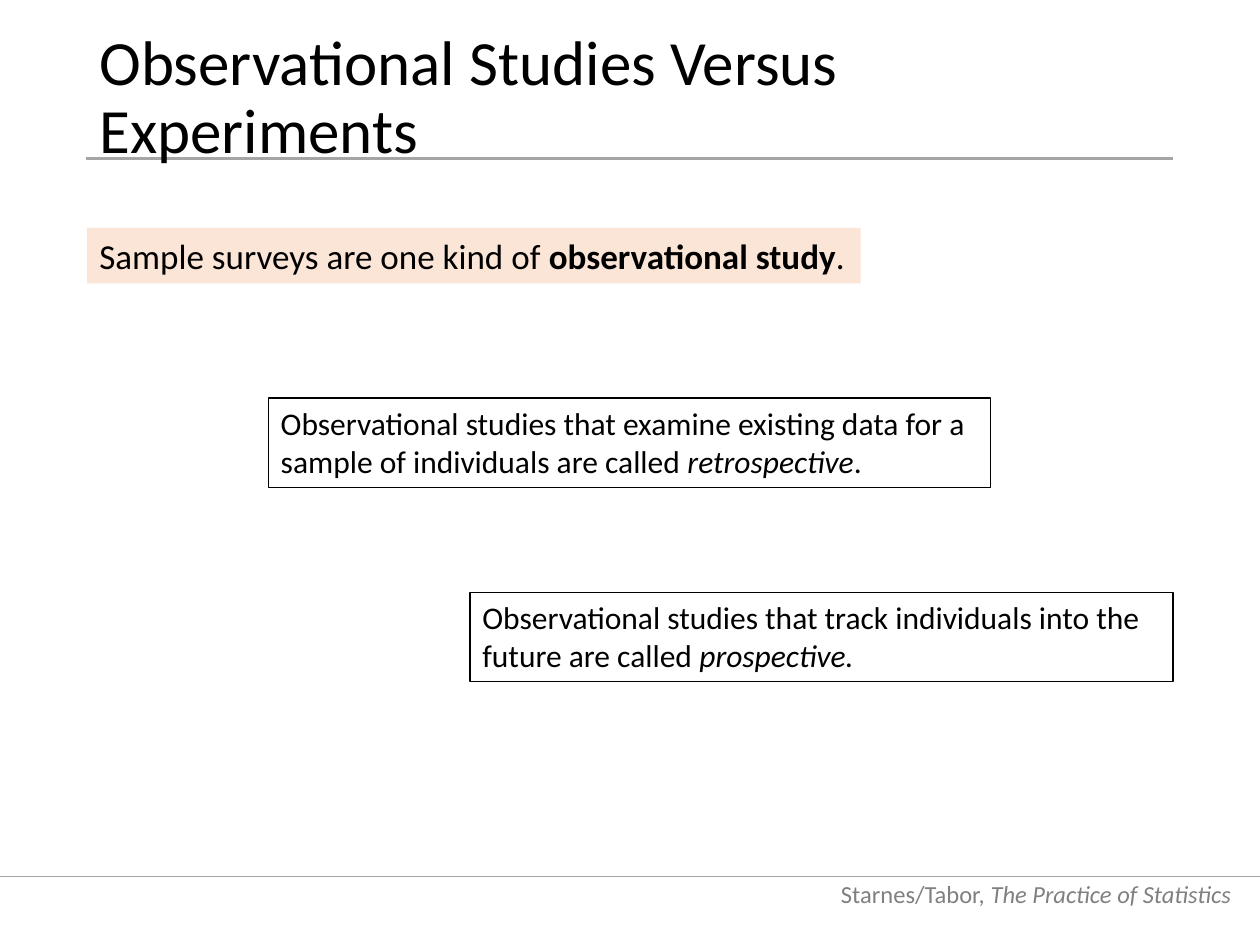
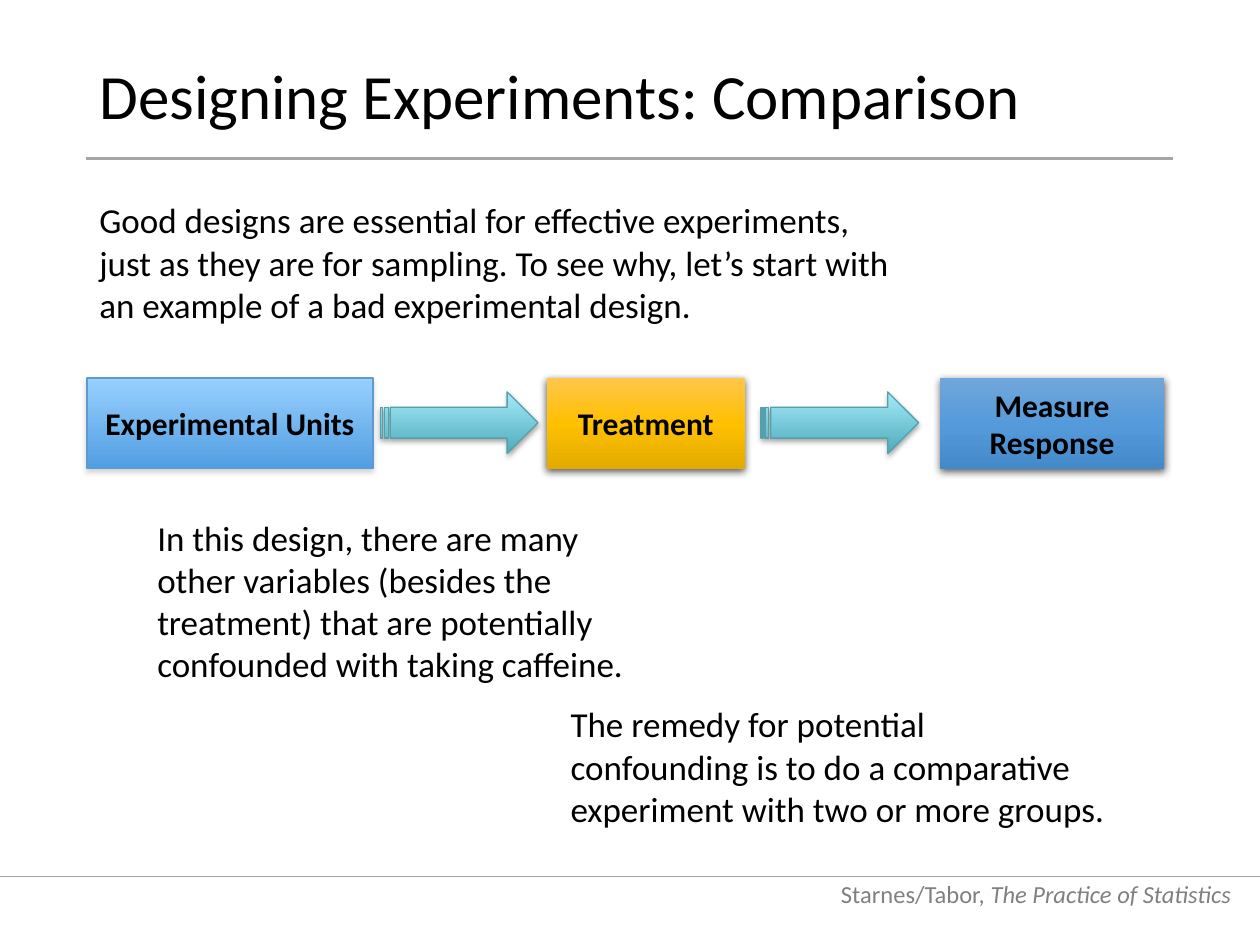
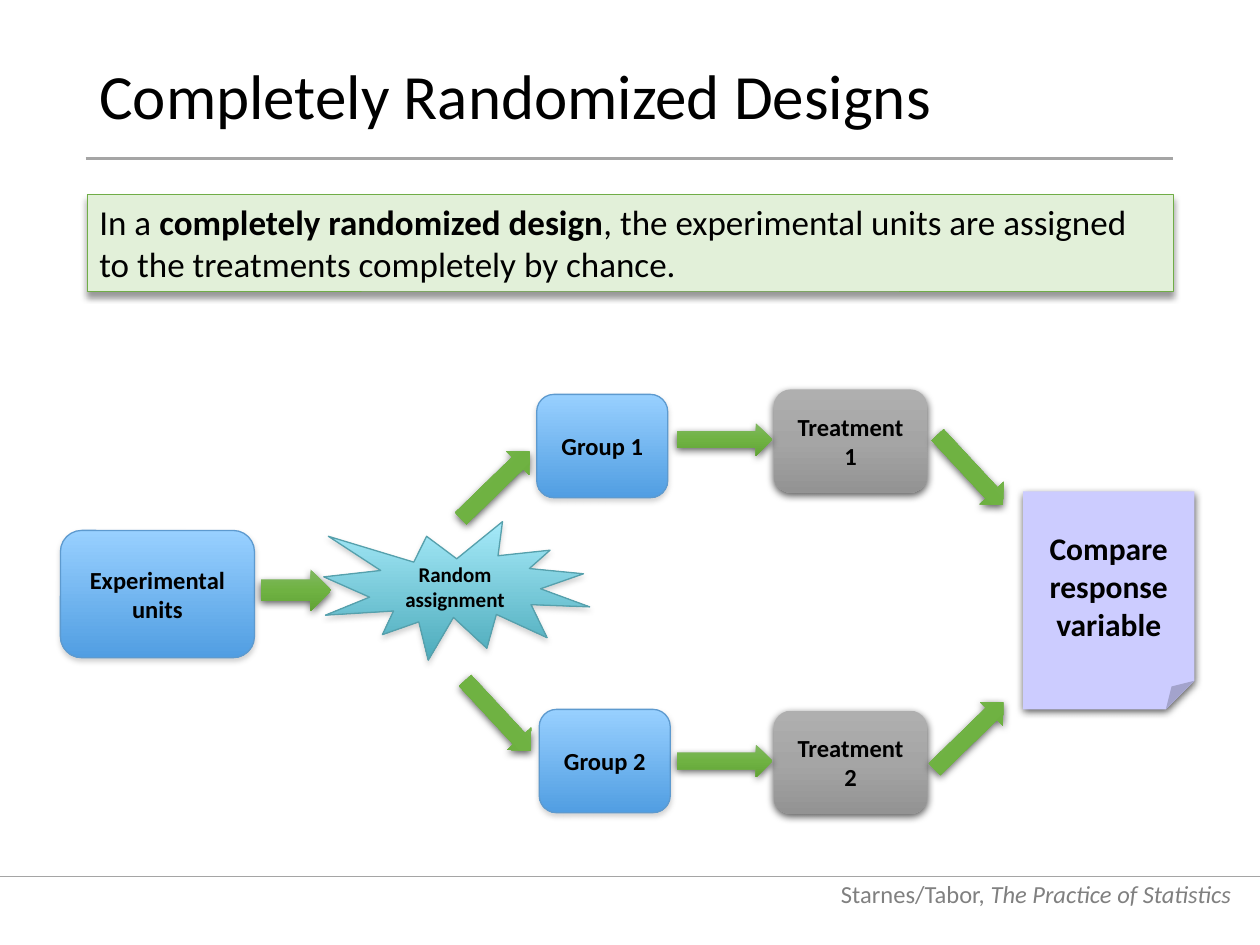
from dataclasses import dataclass

from pptx import Presentation
from pptx.dml.color import RGBColor
from pptx.enum.shapes import MSO_CONNECTOR, MSO_SHAPE
from pptx.enum.text import MSO_ANCHOR, PP_ALIGN
from pptx.oxml import parse_xml
from pptx.oxml.ns import nsdecls, qn
from pptx.util import Pt

SCALE = 9144


@dataclass(frozen=True)
class Skin:
    """Fill stops, outline and shadow of a shape."""
    fill: tuple = ()
    line: str = ""
    width: float = 0.75
    shade: tuple = ()


@dataclass(frozen=True)
class Theme:
    """Colours, type sizes and skins of the deck."""
    font = "Calibri"
    ink = "000000"
    gray = "808080"
    rule = "A5A5A5"
    head = 36
    body = 20
    note = 18
    small = 14
    tiny = 12
    soft = ("808080", 35, 3.1, 1.8)
    deep = ("000000", 63, 4.5, 1.5)
    frame = Skin(line="000000")
    peach = Skin(("FBE5D6",))
    mint = Skin(("E2F0D9",), "70AD47", 0.5, ("000000", 40, 4, 3))
    sky = Skin(("98D0FF", "519EE2"), "5D9ACF", shade=soft)
    aqua = Skin(("A6EAF9", "4DABBB"), "56A0AC", shade=soft)
    teal = Skin(("A6EAF9", "4DABBB"), "56A0AC", shade=("000000", 35, 3.1, 1.8))
    gold = Skin(("FFC64B", "FFC000", "E3AB00"), shade=deep)
    blue = Skin(("71A6DB", "559BDB", "448ACA"), shade=deep)
    green = Skin(("81B861", "6FB242", "62A336"), shade=deep)
    steel = Skin(("AFAFAF", "A5A5A5", "939393"), shade=deep)
    lilac = Skin(("CCCCFF",), shade=deep)


def color(code):
    """Turn a hex code into a colour."""
    return RGBColor.from_string(code)


class Deck:
    """Holds the theme and the current slide."""

    def __init__(self, theme):
        """Start an empty deck."""
        self.theme = theme
        self.prs = Presentation()
        self.prs.slide_width = 1000 * SCALE
        self.prs.slide_height = 750 * SCALE
        self.slide = None

    def page(self, title):
        """Add a slide with its footer, rules and title."""
        t = self.theme
        self.slide = self.prs.slides.add_slide(self.prs.slide_layouts[6])
        self.text((647, 686, 340, 40),
                  ["Starnes/Tabor,", (" The Practice of Statistics", "italic")],
                  t.small, t.gray, PP_ALIGN.RIGHT, MSO_ANCHOR.BOTTOM)
        self.rule(0, 1000, 696, 0.5)
        self.rule(68, 931, 126, 1.5)
        box = self.text((69, 40, 862, 78), [title], t.head, anchor=MSO_ANCHOR.MIDDLE)
        box.text_frame.paragraphs[0].line_spacing = 0.9

    def rule(self, left, right, y, width):
        """Draw a level line."""
        line = self.slide.shapes.add_connector(
            MSO_CONNECTOR.STRAIGHT, *(v * SCALE for v in (left, y, right, y)))
        line.line.color.rgb = color(self.theme.rule)
        line.line.width = Pt(width)
        line._element.spPr.append(parse_xml(f"<a:effectLst {nsdecls('a')}/>"))

    def label(self, shape, runs, size, ink, align, anchor, bold=False):
        """Put one paragraph of runs into a shape."""
        frame = shape.text_frame
        frame.word_wrap = True
        frame.vertical_anchor = anchor
        para = frame.paragraphs[0]
        para.alignment = align
        font = para.font
        font.name, font.size, font.color.rgb = self.theme.font, Pt(size), color(ink)
        if bold:
            font.bold = True
        for part in runs:
            words, mark = (part, "") if isinstance(part, str) else part
            run = para.add_run()
            run.text = words
            if mark == "bold":
                run.font.bold = True
            elif mark == "italic":
                run.font.italic = True

    def text(self, at, runs, size=Theme.body, ink=Theme.ink,
             align=PP_ALIGN.LEFT, anchor=MSO_ANCHOR.TOP):
        """Add a text box."""
        box = self.slide.shapes.add_textbox(*(v * SCALE for v in at))
        self.label(box, runs, size, ink, align, anchor)
        return box

    def shape(self, kind, at, skin, turn=0):
        """Add a preset shape dressed in a skin."""
        item = self.slide.shapes.add_shape(kind, *(v * SCALE for v in at))
        item.rotation = turn
        self.paint(item, skin.fill)
        if skin.line:
            item.line.color.rgb = color(skin.line)
            item.line.width = Pt(skin.width)
        else:
            item.line.fill.background()
        item.shadow.inherit = False
        if skin.shade:
            self.shade(item, *skin.shade)
        return item

    def paint(self, item, fill):
        """Fill a shape with nothing, one colour or a blend."""
        if not fill:
            item.fill.background()
        elif len(fill) == 1:
            item.fill.solid()
            item.fill.fore_color.rgb = color(fill[0])
        else:
            step = 100000 // (len(fill) - 1)
            stops = "".join(f'<a:gs pos="{i * step}"><a:srgbClr val="{code}"/></a:gs>'
                            for i, code in enumerate(fill))
            item._element.spPr.insert(2, parse_xml(
                f'<a:gradFill {nsdecls("a")} rotWithShape="1"><a:gsLst>{stops}</a:gsLst>'
                '<a:lin ang="5400000" scaled="0"/></a:gradFill>'))

    def shade(self, item, code, alpha, blur, dist):
        """Cast a shadow straight down."""
        item._element.spPr.find(qn("a:effectLst")).append(parse_xml(
            f'<a:outerShdw {nsdecls("a")} blurRad="{Pt(blur)}" dist="{Pt(dist)}"'
            f' dir="5400000" rotWithShape="0"><a:srgbClr val="{code}">'
            f'<a:alpha val="{alpha * 1000}"/></a:srgbClr></a:outerShdw>'))

    def panel(self, at, skin, runs, size=Theme.body):
        """Add a box of running text."""
        item = self.shape(MSO_SHAPE.RECTANGLE, at, skin)
        self.label(item, runs, size, self.theme.ink, PP_ALIGN.LEFT, MSO_ANCHOR.TOP)

    def node(self, kind, at, skin, words, size=Theme.small):
        """Add a shape with a bold centred label."""
        item = self.shape(kind, at, skin)
        self.label(item, [words], size, self.theme.ink, PP_ALIGN.CENTER,
                   MSO_ANCHOR.MIDDLE, True)

    def arrow(self, left, top, turn=0, size=(76, 26)):
        """Add a green block arrow."""
        self.shape(MSO_SHAPE.RIGHT_ARROW, (left, top, *size), self.theme.green, turn)


def studies(deck):
    """Build the slide on observational studies."""
    t = deck.theme
    deck.page("Observational Studies Versus Experiments")
    deck.panel((69, 181, 614, 44), t.peach,
               ["Sample surveys are one kind of ", ("observational study", "bold"), "."])
    deck.panel((213, 316, 573, 71), t.frame,
               ["Observational studies that examine existing data for a sample of "
                "individuals are called ", ("retrospective", "italic"), "."], t.note)
    deck.panel((373, 470, 558, 71), t.frame,
               ["Observational studies that track individuals into the future are called ",
                ("prospective.", "italic")], t.note)


def compare(deck):
    """Build the slide on comparison."""
    t = deck.theme
    deck.page("Designing Experiments: Comparison")
    deck.text((69, 153, 660, 111),
              ["Good designs are essential for effective experiments, just as they are for "
               "sampling. To see why, let’s start with an example of a bad experimental "
               "design."])
    for left, wide, skin, words in ((69, 227, t.sky, "Experimental Units"),
                                    (434, 157, t.gold, "Treatment"),
                                    (746, 178, t.blue, "Measure Response")):
        deck.node(MSO_SHAPE.RECTANGLE, (left, 300, wide, 72), skin, words, t.note)
    for left in (302, 604):
        deck.shape(MSO_SHAPE.STRIPED_RIGHT_ARROW, (left, 311, 125, 49), t.teal)
    deck.text((115, 405, 407, 145),
              ["In this design, there are many other variables (besides the treatment) "
               "that are potentially confounded with taking caffeine."])
    deck.text((443, 553, 446, 111),
              ["The remedy for potential confounding is to do a comparative experiment "
               "with two or more groups."])


def chance(deck):
    """Build the slide on randomized designs."""
    t = deck.theme
    up, down = 315.8, 47.1
    deck.page("Completely Randomized Designs")
    deck.panel((69, 154, 862, 77), t.mint,
               ["In a ", ("completely randomized design", "bold"),
                ", the experimental units are assigned to the treatments completely "
                "by chance."])
    deck.node(MSO_SHAPE.ROUNDED_RECTANGLE, (48, 421, 154, 101), t.sky, "Experimental units")
    deck.node(MSO_SHAPE.EXPLOSION1, (257, 414, 211, 110), t.aqua,
              "Random assignment", t.tiny)
    deck.arrow(207, 452, size=(56, 33))
    rows = (((426, 313), (614, 309), (355, 372, up), (537, 336), (732, 360, down)),
            ((428, 563), (614, 564), (357, 555, down), (537, 591), (731, 571, up)))
    for num, (group, treat, *arrows) in enumerate(rows, 1):
        deck.node(MSO_SHAPE.ROUNDED_RECTANGLE, (*group, 104, 82), t.sky, f"Group {num}")
        deck.node(MSO_SHAPE.ROUNDED_RECTANGLE, (*treat, 122, 82), t.steel,
                  f"Treatment {num}")
        for spot in arrows:
            deck.arrow(*spot)
    deck.node(MSO_SHAPE.FOLDED_CORNER, (812, 390, 136, 173), t.lilac,
              "Compare response variable", t.note)


def main():
    """Build and save the deck."""
    deck = Deck(Theme())
    for build in (studies, compare, chance):
        build(deck)
    deck.prs.save("out.pptx")


if __name__ == "__main__":
    main()
